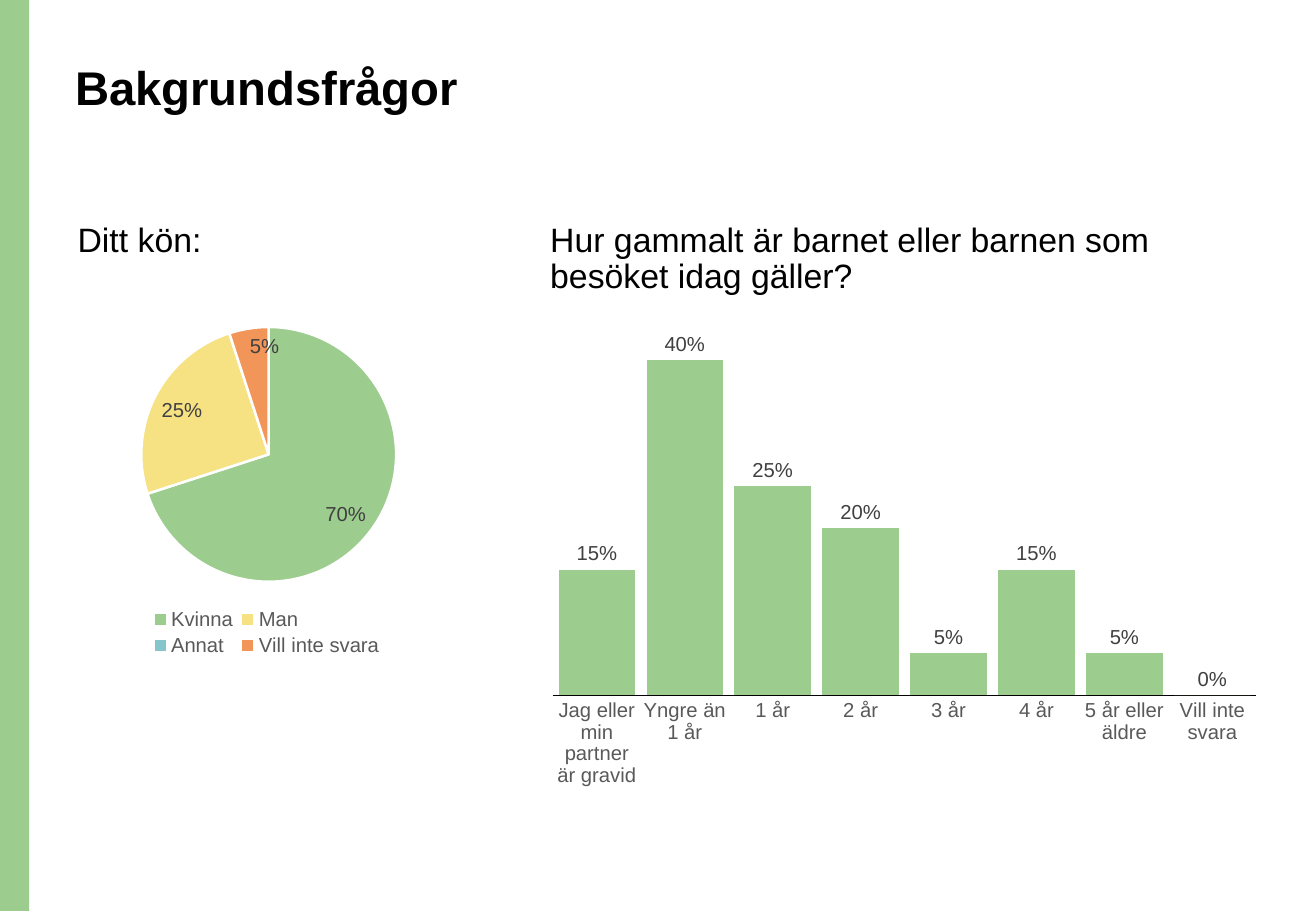
import pptx
import pptx.chart.data
import pptx.dml.color
import pptx.enum.chart
import pptx.enum.shapes
import pptx.oxml
import pptx.util
from dataclasses import dataclass

Inches = pptx.util.Inches
Pt = pptx.util.Pt
Kind = pptx.enum.chart.XL_CHART_TYPE
Spot = pptx.enum.chart.XL_LABEL_POSITION
NS = "http://schemas.openxmlformats.org/drawingml/2006/chart"


@dataclass(frozen=True)
class Theme:
    """Colours, font and type sizes."""
    font: str = "Arial"
    ink: str = "000000"
    label: str = "404040"
    muted: str = "595959"
    paper: str = "FFFFFF"
    green: str = "9DCC8F"
    yellow: str = "F6E183"
    blue: str = "85C5CB"
    orange: str = "F29559"
    title: int = 28
    body: int = 20
    small: int = 12


class Page:
    """Draws elements on one slide in one theme."""

    def __init__(self, slide, theme):
        self.slide = slide
        self.theme = theme

    def color(self, code):
        return pptx.dml.color.RGBColor.from_string(code)

    def paint(self, fill, code):
        fill.solid()
        fill.fore_color.rgb = self.color(code)

    def style(self, font, size, code, bold=False):
        font.name = self.theme.font
        font.size = Pt(size)
        font.bold = bold
        font.color.rgb = self.color(code)

    def bar(self, box, code):
        shape = self.slide.shapes.add_shape(
            pptx.enum.shapes.MSO_SHAPE.RECTANGLE, *map(Inches, box))
        shape.shadow.inherit = False
        self.paint(shape.fill, code)
        shape.line.fill.background()

    def text(self, box, words, size, bold=False):
        frame = self.slide.shapes.add_textbox(*map(Inches, box)).text_frame
        frame.word_wrap = True
        para = frame.paragraphs[0]
        para.line_spacing = 0.9
        run = para.add_run()
        run.text = words
        self.style(run.font, size, self.theme.ink, bold)

    def place(self, parent, index, area, inner=False):
        for old in parent.findall(f"{{{NS}}}layout"):
            parent.remove(old)
        target = '<c:layoutTarget val="inner"/>' if inner else ""
        modes = "".join(f'<c:{key}Mode val="edge"/>' for key in "xy")
        sizes = "".join(f'<c:{key} val="{val}"/>' for key, val in zip("xywh", area))
        parent.insert(index, pptx.oxml.parse_xml(
            f'<c:layout xmlns:c="{NS}"><c:manualLayout>{target}{modes}{sizes}'
            '</c:manualLayout></c:layout>'))

    def chart(self, kind, box, area, rows, form, spot):
        data = pptx.chart.data.CategoryChartData(number_format="0%")
        data.categories = [name for name, _ in rows]
        data.add_series("Series 1", [value for _, value in rows])
        chart = self.slide.shapes.add_chart(kind, *map(Inches, box), data).chart
        chart.has_title = False
        chart.has_legend = False
        self.style(chart.font, self.theme.small, self.theme.ink)
        plot = chart.plots[0]
        plot.has_data_labels = True
        labels = plot.data_labels
        labels.show_value = True
        labels.show_percentage = False
        labels.number_format = form
        labels.number_format_is_linked = False
        labels.position = spot
        self.style(labels.font, self.theme.small, self.theme.label)
        self.place(plot._element.getparent(), 0, area, inner=True)
        return chart

    def pie(self, box, rows, codes):
        chart = self.chart(Kind.PIE, box, (0.19, 0.05, 0.63, 0.72), rows,
                           '[<0.01]"";[>0.01]0%', Spot.INSIDE_END)
        plot = chart.plots[0]
        plot.vary_by_categories = True
        for index, code in enumerate(codes):
            form = plot.series[0].points[index].format
            self.paint(form.fill, code)
            self.paint(form.line.fill, self.theme.paper)
            form.line.width = Pt(1.5)
        chart.has_legend = True
        legend = chart.legend
        legend.position = pptx.enum.chart.XL_LEGEND_POSITION.BOTTOM
        legend.include_in_layout = False
        self.style(legend.font, self.theme.small, self.theme.muted)
        self.place(legend._element, 1, (0.2, 0.83, 0.6, 0.16))

    def columns(self, box, rows):
        chart = self.chart(Kind.COLUMN_CLUSTERED, box, (0.02, 0.02, 0.96, 0.77),
                           rows, "0%", Spot.OUTSIDE_END)
        plot = chart.plots[0]
        plot.vary_by_categories = False
        plot.gap_width = 15
        plot.overlap = -27
        self.paint(plot.series[0].format.fill, self.theme.green)
        scale = chart.value_axis
        scale.minimum_scale = 0
        scale.maximum_scale = 0.45
        scale.has_major_gridlines = False
        scale.visible = False
        axis = chart.category_axis
        axis.major_tick_mark = pptx.enum.chart.XL_TICK_MARK.NONE
        self.style(axis.tick_labels.font, self.theme.small, self.theme.muted)
        self.paint(axis.format.line.fill, self.theme.ink)
        axis.format.line.width = Pt(0.75)


def main():
    deck = pptx.Presentation()
    deck.slide_width = Inches(10.83)
    deck.slide_height = Inches(7.5)
    theme = Theme()
    page = Page(deck.slides.add_slide(deck.slide_layouts[6]), theme)
    page.bar((0, 0, 0.24, 7.5), theme.green)
    page.text((0.52, 0.48, 9.34, 1.02), "Bakgrundsfrågor", theme.title, bold=True)
    page.text((0.54, 1.79, 4.58, 0.46), "Ditt kön:", theme.body)
    page.text((4.43, 1.79, 6.03, 0.74),
              "Hur gammalt är barnet eller barnen som besöket idag gäller?", theme.body)
    page.pie((0.53, 2.54, 3.33, 2.93),
             [("Kvinna", 0.7), ("Man", 0.25), ("Annat", 0), ("Vill inte svara", 0.05)],
             [theme.green, theme.yellow, theme.blue, theme.orange])
    page.columns((4.43, 2.54, 6.03, 4.03), [
        ("Jag eller min partner är gravid", 0.15), ("Yngre än 1 år", 0.4),
        ("1 år", 0.25), ("2 år", 0.2), ("3 år", 0.05), ("4 år", 0.15),
        ("5 år eller äldre", 0.05), ("Vill inte svara", 0)])
    deck.save("out.pptx")


if __name__ == "__main__":
    main()
